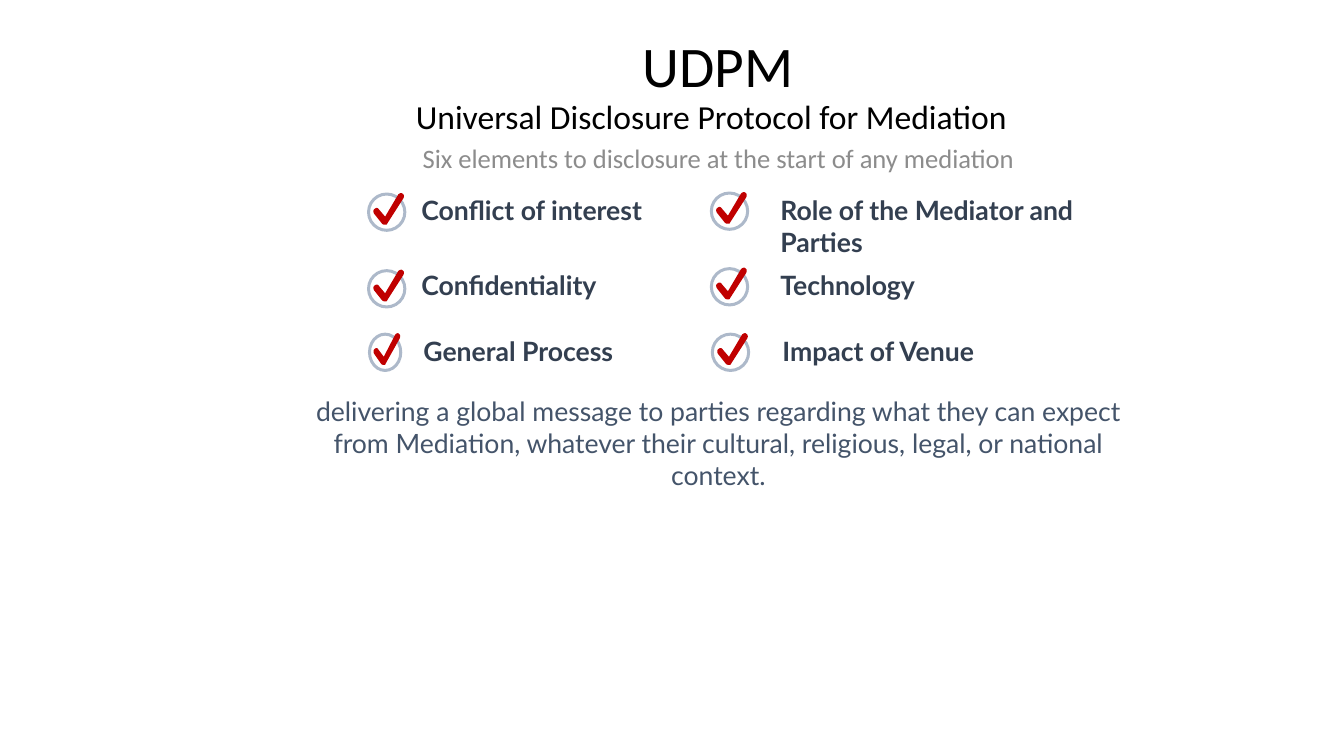
from pptx import Presentation
from pptx.dml.color import RGBColor
from pptx.enum.shapes import MSO_SHAPE as SHAPE
from pptx.enum.text import MSO_ANCHOR as ANCHOR, PP_ALIGN as ALIGN
from pptx.util import Inches, Pt

COLORS = {"title": "000000", "subtitle": "8C8C8C", "item": "333F50",
          "message": "44546A", "ring": "ADB9CA", "tick": "C00000"}
ICON = 0.39   # side of a check icon
BAND = 0.03   # thickness of its ring

# Tick outline inside the icon: 2 numbers are a line, 6 a Bezier curve
TICK = [(0.18, 0.32), (0.17, 0.32, 0.16, 0.32, 0.15, 0.31), (0.07, 0.21),
        (0.06, 0.19, 0.06, 0.17, 0.08, 0.16), (0.09, 0.15, 0.11, 0.15, 0.12, 0.17),
        (0.18, 0.24), (0.31, 0.02), (0.32, 0.01, 0.34, 0, 0.35, 0.01),
        (0.37, 0.02, 0.37, 0.04, 0.36, 0.06), (0.2, 0.31),
        (0.2, 0.32, 0.19, 0.32, 0.18, 0.32)]

# Label, icon left, icon top, icon width, text left, text top, text size
ITEMS = [
    ("Conflict of interest", 3.64, 1.91, ICON, 4.18, 1.92, 3.41, 0.5),
    ("Role of the Mediator and Parties", 7.04, 1.9, ICON, 7.74, 1.92, 3.41, 0.64),
    ("Confidentiality", 3.64, 2.67, ICON, 4.18, 2.67, 2.54, 0.32),
    ("Technology", 7.04, 2.65, ICON, 7.74, 2.67, 3.41, 0.32),
    ("General Process", 3.65, 3.3, 0.34, 4.2, 3.32, 2.98, 0.32),
    ("Impact of Venue", 7.05, 3.3, ICON, 7.76, 3.32, 3.41, 0.32),
]


def add_text(shapes, box, lines, color, font="Lato", bold=False, align=ALIGN.LEFT,
             anchor=ANCHOR.TOP, insets=(0, 0, 0, 0), spacing=None):
    """Add a text box; lines holds (text, size) pairs, one per paragraph."""
    tf = shapes.add_textbox(*map(Inches, box)).text_frame
    tf.word_wrap = True
    tf.vertical_anchor = anchor
    tf.margin_left, tf.margin_top, tf.margin_right, tf.margin_bottom = map(Inches, insets)
    for i, (text, size) in enumerate(lines):
        p = tf.add_paragraph() if i else tf.paragraphs[0]
        p.alignment = align
        if spacing:
            p.line_spacing = spacing
        r = p.add_run()
        r.text = text
        r.font.name, r.font.size, r.font.bold = font, Pt(size), bold
        r.font.color.rgb = RGBColor.from_string(COLORS[color])
    return tf


def paint(sp, color):
    sp.shadow.inherit = False
    sp.fill.solid()
    sp.fill.fore_color.rgb = RGBColor.from_string(COLORS[color])
    sp.line.fill.background()


def tick_points(steps=6):
    """Flatten the tick outline to points."""
    points = [TICK[0]]
    for seg in TICK[1:]:
        if len(seg) == 2:
            points.append(seg)
            continue
        start = points[-1]
        for t in (i / steps for i in range(1, steps + 1)):
            points.append(tuple(
                (1 - t) ** 3 * start[k] + 3 * (1 - t) ** 2 * t * seg[k]
                + 3 * (1 - t) * t ** 2 * seg[k + 2] + t ** 3 * seg[k + 4]
                for k in (0, 1)))
    return points


def add_check(shapes, x, y, w):
    ring = shapes.add_shape(SHAPE.DONUT, *map(Inches, (x, y, w, ICON)))
    ring.adjustments[0] = BAND / w
    paint(ring, "ring")
    points = [(Inches(x + px * w / ICON), Inches(y + py)) for px, py in tick_points()]
    outline = shapes.build_freeform(*points[0])
    outline.add_line_segments(points[1:], close=True)
    paint(outline.convert_to_shape(), "tick")


def add_item(s, label, x, y, w, *text_box):
    group = s.shapes.add_group_shape()
    add_check(group.shapes, x, y, w)
    add_text(group.shapes, text_box, [(label, 19)], "item", bold=True)


def add_heading(s, x, y, w):
    tf = add_text(s.shapes, (x, y, w, 1.1),
                  [("UDPM", 41), ("Universal Disclosure Protocol for Mediation", 24)],
                  "title", font="Calibri", align=ALIGN.CENTER,
                  insets=(0.1, 0.15, 0.1, 0), spacing=0.9)
    # The second line sits slightly left of centre
    tf.paragraphs[1]._p.get_or_add_pPr().set("marR", str(Inches(0.14)))
    add_text(s.shapes, (x, y + 1.1, w, 0.47),
             [("Six elements to disclosure at the start of any mediation", 19)],
             "subtitle", font="Calibri", align=ALIGN.CENTER, anchor=ANCHOR.MIDDLE,
             insets=(0.1, 0.05, 0.1, 0.05))


def add_message(s, x, y, w):
    add_text(s.shapes, (x, y, w, 0.47),
             [("delivering a global message to parties regarding what they can expect "
               "from Mediation, whatever their cultural, religious, legal, or national "
               "context.", 19)],
             "message", align=ALIGN.CENTER, insets=(0, 0, 0, 0.1))


def main():
    prs = Presentation()
    prs.slide_width, prs.slide_height = Inches(13.33), Inches(7.5)
    s = prs.slides.add_slide(prs.slide_layouts[6])
    add_heading(s, 3.09, 0.23, 8.07)
    for item in ITEMS:
        add_item(s, *item)
    add_message(s, 3.09, 3.92, 8.07)
    prs.save("out.pptx")


if __name__ == "__main__":
    main()
